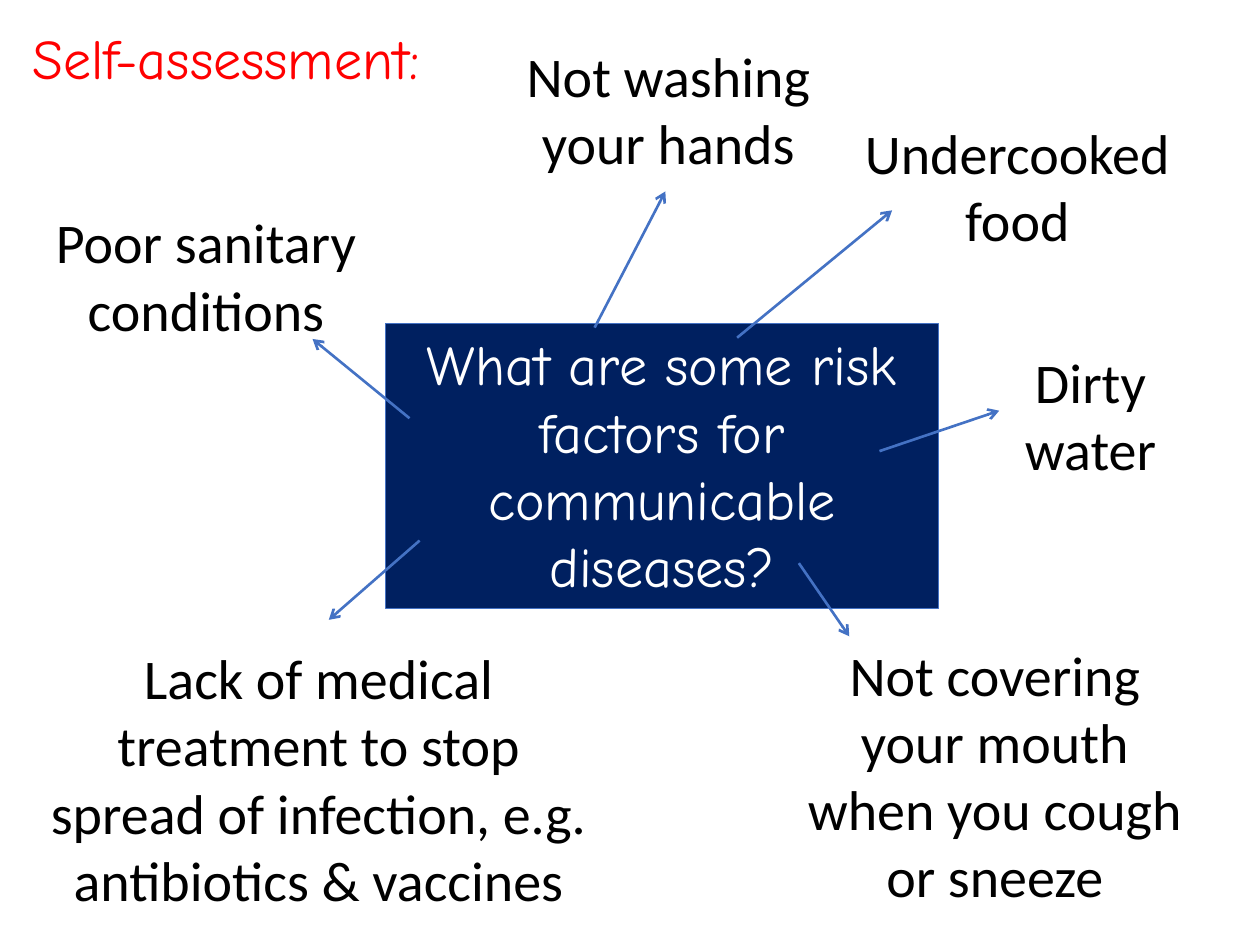
import pptx
import pptx.dml.color
import pptx.enum.shapes
import pptx.enum.text
import pptx.util
from lxml import etree

Pt = pptx.util.Pt
BLUE, NAVY = "4472C4", "002060"
HEADING_FONT, BODY_FONT = "Comic Neue", "Calibri"
CENTER = pptx.enum.text.PP_ALIGN.CENTER
LEFT = pptx.enum.text.PP_ALIGN.LEFT

# Risk factor, its box (left, top, width, height), arrow start and arrow end
RISK_FACTORS = [
    ("Poor sanitary conditions", (20.2, 115.2, 195.1, 85), (234, 239), (178.6, 193.7)),
    ("Not washing your hands", (284.4, 20.2, 195.1, 85), (339.8, 187.2), (380.2, 109.4)),
    ("Undercooked food", (483.8, 64.1, 195.1, 85), (421.2, 193), (509.8, 120.2)),
    ("Dirty water", (544.3, 195.1, 157.7, 85), (502.6, 257.8), (571, 234.7)),
    ("Not covering your mouth when you cough or sneeze",
     (452.2, 362.2, 232.6, 162.7), (456.5, 321.8), (485.3, 363.6)),
    ("Lack of medical treatment to stop spread of infection, e.g. antibiotics & vaccines",
     (18.7, 364.3, 326.9, 162.7), (239.8, 308.9), (187.9, 354.2)),
]


def color(hex_string):
    return pptx.dml.color.RGBColor.from_string(hex_string)


def write(holder, words, font_name, hex_string, alignment):
    frame = holder.text_frame
    frame.word_wrap = True
    frame.text = words
    paragraph = frame.paragraphs[0]
    paragraph.alignment = alignment
    font = paragraph.runs[0].font
    font.name, font.size = font_name, Pt(32)
    font.color.rgb = color(hex_string)


def add_label(slide, box, words, font_name=BODY_FONT, hex_string="000000", alignment=CENTER):
    label = slide.shapes.add_textbox(*map(Pt, box))
    write(label, words, font_name, hex_string, alignment)


def add_question(slide, box, words):
    question = slide.shapes.add_shape(
        pptx.enum.shapes.MSO_SHAPE.RECTANGLE, *map(Pt, box))
    question.shadow.inherit = False
    question.fill.solid()
    question.fill.fore_color.rgb = color(NAVY)
    question.line.color.rgb = color(BLUE)
    question.line.width = Pt(0.5)
    write(question, words, HEADING_FONT, "FFFFFF", CENTER)
    question.text_frame.vertical_anchor = pptx.enum.text.MSO_ANCHOR.TOP


def add_arrow(slide, start, end):
    arrow = slide.shapes.add_connector(
        pptx.enum.shapes.MSO_CONNECTOR.STRAIGHT, *map(Pt, start + end))
    arrow.line.color.rgb = color(BLUE)
    arrow.line.width = Pt(1.5)
    # Open arrowhead, no shadow
    outline = arrow.line._get_or_add_ln()
    etree.SubElement(outline, pptx.oxml.ns.qn("a:tailEnd"), type="arrow")
    etree.SubElement(outline.getparent(), pptx.oxml.ns.qn("a:effectLst"))


def add_risk_factor(slide, box, words, start, end):
    add_arrow(slide, start, end)
    add_label(slide, box, words)


def main():
    deck = pptx.Presentation()
    deck.slide_width, deck.slide_height = Pt(720), Pt(540)
    slide = deck.slides.add_slide(deck.slide_layouts[6])

    # Central question
    add_question(slide, (220.3, 185, 316.1, 162.7),
                 "What are some risk factors for communicable diseases?")

    # Answers around it
    for words, box, start, end in RISK_FACTORS:
        add_risk_factor(slide, box, words, start, end)

    # Heading
    add_label(slide, (11.5, 10.1, 299.5, 46.1), "Self-assessment:",
              HEADING_FONT, "FF0000", LEFT)

    deck.save("out.pptx")


if __name__ == "__main__":
    main()
